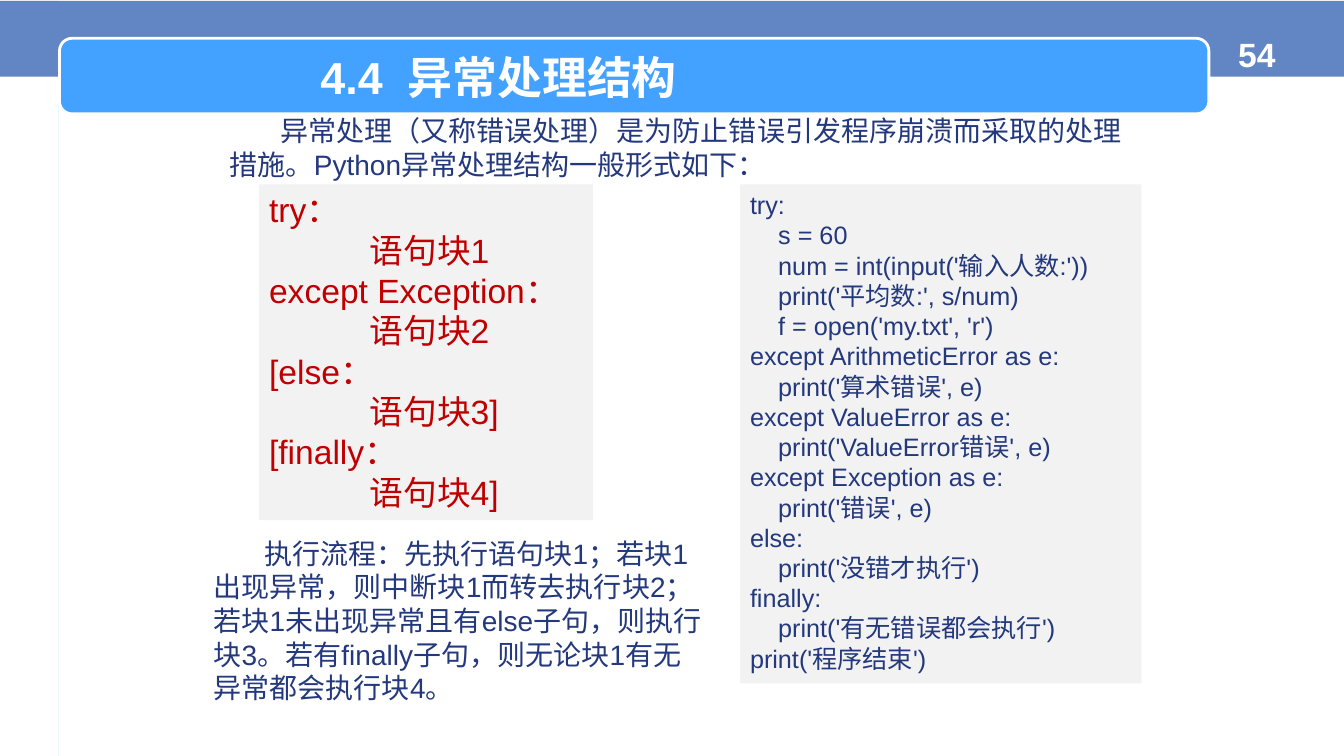
"""Build a slide on the structure of exception handling in Python."""
from lxml.etree import SubElement
from pptx import Presentation
from pptx.dml.color import RGBColor
from pptx.enum.dml import MSO_PATTERN
from pptx.enum.shapes import MSO_SHAPE
from pptx.enum.text import MSO_ANCHOR, PP_ALIGN
from pptx.oxml.ns import qn
from pptx.util import Pt

PX = 9144
FONT = "Arial"
WHITE = RGBColor(0xFF, 0xFF, 0xFF)
PALE_BLUE = RGBColor(0xCC, 0xEC, 0xFF)
BAND_BLUE = RGBColor(0x49, 0x72, 0xBB)
TITLE_BLUE = RGBColor(0x43, 0xA1, 0xFF)
NAVY = RGBColor(0x23, 0x38, 0x7D)
RED = RGBColor(0xC0, 0x00, 0x00)
GREY = RGBColor(0xF2, 0xF2, 0xF2)

PAGE_NUMBER = "54"
TITLE = "4.4  异常处理结构"
INTRO = "异常处理（又称错误处理）是为防止错误引发程序崩溃而采取的处理措施。Python异常处理结构一般形式如下："
FLOW = (
    "执行流程：先执行语句块1；若块1出现异常，则中断块1而转去执行块2；"
    "若块1未出现异常且有else子句，则执行块3。"
    "若有finally子句，则无论块1有无异常都会执行块4。"
)
SYNTAX = [
    ("try：", ["语句块1"]),
    ("except Exception：", ["语句块2"]),
    ("[else：", ["语句块3]"]),
    ("[finally：", ["语句块4]"]),
]
EXAMPLE = [
    ("try:", [
        "s = 60",
        "num = int(input('输入人数:'))",
        "print('平均数:', s/num)",
        "f = open('my.txt', 'r')",
    ]),
    ("except ArithmeticError as e:", ["print('算术错误', e)"]),
    ("except ValueError as e:", ["print('ValueError错误', e)"]),
    ("except Exception as e:", ["print('错误', e)"]),
    ("else:", ["print('没错才执行')"]),
    ("finally:", ["print('有无错误都会执行')"]),
    ("print('程序结束')", []),
]


def scaled(place):
    return [length * PX for length in place]


def add_panel(page, place, kind=MSO_SHAPE.RECTANGLE, color=GREY):
    panel = page.shapes.add_shape(kind, *scaled(place))
    panel.shadow.inherit = False
    panel.fill.solid()
    panel.fill.fore_color.rgb = color
    panel.line.fill.background()
    return panel


def write(frame, text, size, color, bold=False, align=PP_ALIGN.LEFT,
          anchor=MSO_ANCHOR.TOP, margin=0, indent=0, first=True):
    frame.word_wrap = True
    frame.vertical_anchor = anchor
    para = frame.paragraphs[0] if first else frame.add_paragraph()
    para.alignment = align
    properties = para._p.get_or_add_pPr()
    properties.set("marL", str(margin * PX))
    properties.set("indent", str(indent * PX))
    span = para.add_run()
    span.text = text
    span.font.name = FONT
    span.font.size = Pt(size)
    span.font.bold = bold
    span.font.color.rgb = color


def add_text(page, place, text, size, color, **style):
    box = page.shapes.add_textbox(*scaled(place))
    write(box.text_frame, text, size, color, **style)


def add_code(page, place, clauses, size, color, step):
    frame = add_panel(page, place).text_frame
    lines = [(margin, line) for head, body in clauses
             for margin, line in [(0, head)] + [(step, item) for item in body]]
    for number, (margin, line) in enumerate(lines):
        write(frame, line, size, color, margin=margin, first=number == 0)


def main():
    deck = Presentation()
    deck.slide_width, deck.slide_height = scaled((1333, 750))
    page = deck.slides.add_slide(deck.slide_layouts[6])

    strip = add_panel(page, (0, 1, 58, 749))
    strip.fill.patterned()
    strip.fill.pattern = MSO_PATTERN.DARK_HORIZONTAL
    strip.fill.fore_color.rgb = WHITE
    strip.fill.back_color.rgb = PALE_BLUE

    band = add_panel(page, (0, 1, 1333, 75), color=BAND_BLUE)
    tint = band._element.spPr.find(qn("a:solidFill"))[0]
    SubElement(tint, qn("a:alpha")).set("val", "86000")

    banner = add_panel(page, (59, 38, 1140, 75),
                       kind=MSO_SHAPE.ROUNDED_RECTANGLE, color=TITLE_BLUE)
    banner.line.color.rgb = WHITE
    banner.line.width = Pt(2)

    add_text(page, (1186, 29, 121, 71), PAGE_NUMBER, 24, WHITE,
             bold=True, align=PP_ALIGN.CENTER)
    add_text(page, (308, 44, 717, 64), TITLE, 32, WHITE,
             bold=True, anchor=MSO_ANCHOR.MIDDLE)
    add_text(page, (218, 108, 929, 77), INTRO, 20, NAVY, indent=50)
    add_code(page, (257, 183, 331, 333), SYNTAX, 24, RED, step=100)
    add_text(page, (202, 527, 509, 178), FLOW, 20, NAVY, indent=50)
    add_code(page, (734, 183, 398, 495), EXAMPLE, 18, NAVY, step=28)

    deck.save("out.pptx")


if __name__ == "__main__":
    main()
